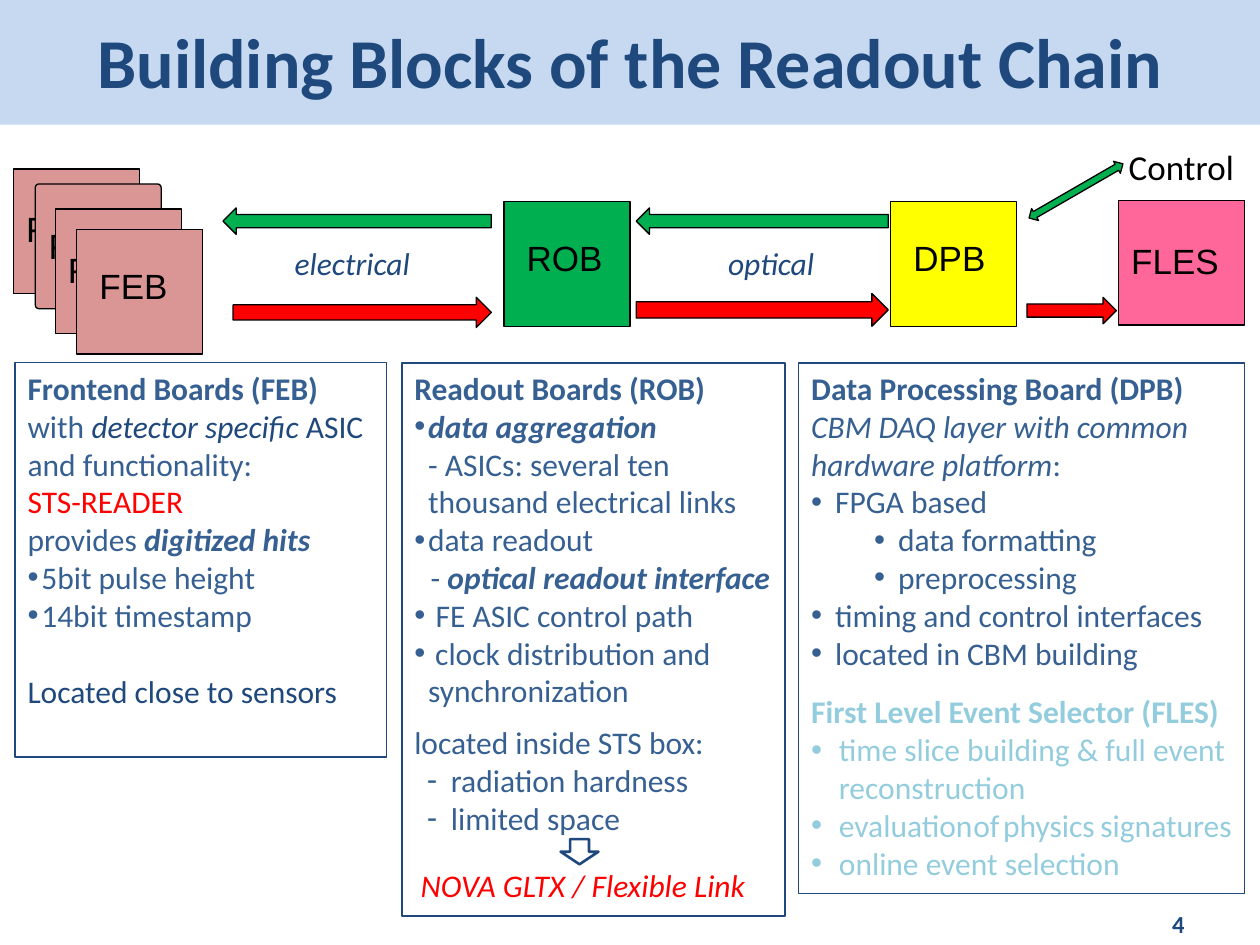
from typing import NamedTuple

from lxml.etree import SubElement
from pptx import Presentation
from pptx.dml.color import RGBColor
from pptx.enum.shapes import MSO_SHAPE
from pptx.enum.text import MSO_ANCHOR, PP_ALIGN
from pptx.oxml.ns import qn
from pptx.util import Emu, Pt

PX = 9144  # 100 px to the inch
COLORS = {
    "band": "C6D9F1", "navy": "1F497D", "blue": "376092", "pale": "93CDDD",
    "black": "000000", "red": "FF0000", "green": "00B050", "yellow": "FFFF00",
    "pink": "FF6699", "rose": "D99694",
}


class Box(NamedTuple):
    x: int
    y: int
    w: int
    h: int


class Run(NamedTuple):
    text: str
    color: str = "blue"
    bold: bool = False
    italic: bool = False
    size: int = 18


class Para(NamedTuple):
    runs: list[Run]
    left: int = 0
    hang: int = 0
    bullet: str = ""
    before: int = 0


class Board(NamedTuple):
    label: str
    box: Box
    fill: str
    left: int = 10
    top: int = 31
    corner: float = 0


class Arrow(NamedTuple):
    kind: MSO_SHAPE
    box: Box
    fill: str
    rotation: int = 0


class Panel(NamedTuple):
    box: Box
    paras: list[Para]


def px(n: int) -> Emu:
    return Emu(n * PX)


def rgb(name: str) -> RGBColor:
    return RGBColor.from_string(COLORS[name])


def add_run(p, text, *, size=18, font="Calibri", color="blue", bold=False, italic=False):
    r = p.add_run()
    r.text = text
    r.font.size, r.font.name = Pt(size), font
    r.font.bold, r.font.italic = bold, italic
    r.font.color.rgb = rgb(color)


def add_shape(slide, kind: MSO_SHAPE, box: Box, fill="", line="", width=0.75):
    sp = slide.shapes.add_shape(kind, *map(px, box))
    sp.shadow.inherit = False
    if fill:
        sp.fill.solid()
        sp.fill.fore_color.rgb = rgb(fill)
    else:
        sp.fill.background()
    if line:
        sp.line.color.rgb = rgb(line)
        sp.line.width = Pt(width)
    else:
        sp.line.fill.background()
    return sp


def add_label(slide, text: str, box: Box, align=PP_ALIGN.LEFT, wrap=False, **fmt) -> None:
    tf = slide.shapes.add_textbox(*map(px, box)).text_frame
    tf.word_wrap = wrap
    tf.vertical_anchor = MSO_ANCHOR.MIDDLE
    p = tf.paragraphs[0]
    p.alignment = align
    add_run(p, text, **fmt)


def add_board(slide, board: Board) -> None:
    kind = MSO_SHAPE.ROUNDED_RECTANGLE if board.corner else MSO_SHAPE.RECTANGLE
    sp = add_shape(slide, kind, board.box, board.fill, "black")
    if board.corner:
        sp.adjustments[0] = board.corner
    tf = sp.text_frame
    tf.vertical_anchor = MSO_ANCHOR.TOP
    tf.margin_left, tf.margin_top = px(board.left), px(board.top)
    p = tf.paragraphs[0]
    p.alignment = PP_ALIGN.LEFT
    add_run(p, board.label, size=20, font="Arial", color="black")


def add_arrow(slide, arrow: Arrow) -> None:
    add_shape(slide, arrow.kind, arrow.box, arrow.fill, "black").rotation = arrow.rotation


def add_panel(slide, panel: Panel) -> None:
    tf = add_shape(slide, MSO_SHAPE.RECTANGLE, panel.box, line="navy").text_frame
    tf.word_wrap = True
    tf.vertical_anchor = MSO_ANCHOR.TOP
    for i, para in enumerate(panel.paras):
        p = tf.add_paragraph() if i else tf.paragraphs[0]
        p.alignment = PP_ALIGN.LEFT
        p.space_before = Pt(para.before)
        pPr = p._p.get_or_add_pPr()
        pPr.set("marL", str(px(para.left)))
        pPr.set("indent", str(px(-para.hang)))
        if para.bullet:
            SubElement(pPr, qn("a:buFont")).set("typeface", "Arial")
            SubElement(pPr, qn("a:buChar")).set("char", para.bullet)
        for run in para.runs:
            add_run(p, **run._asdict())


def plain(text: str, left=0, before=0, **fmt) -> Para:
    return Para([Run(text, **fmt)], left, before=before)


def item(text: str, left=11, hang=0, bullet="•", **fmt) -> Para:
    return Para([Run(text, **fmt)], left, hang or left, bullet)


BOARDS = [
    Board("FEE", Box(11, 134, 100, 99), "rose"),
    Board("ROB", Box(400, 160, 100, 99), "green", 18, 28),
    Board("DPB", Box(707, 160, 100, 99), "yellow", 18, 28),
    Board("FLES", Box(888, 159, 100, 99), "pink"),
    Board("FEE", Box(28, 146, 100, 99), "rose", corner=0.03),
    Board("FEE", Box(44, 166, 100, 99), "rose"),
    Board("FEB", Box(61, 182, 100, 99), "rose", 18, 28),
]

ARROWS = [
    Arrow(MSO_SHAPE.RIGHT_ARROW, Box(185, 236, 205, 24), "red"),
    Arrow(MSO_SHAPE.RIGHT_ARROW, Box(505, 233, 200, 26), "red"),
    Arrow(MSO_SHAPE.RIGHT_ARROW, Box(815, 236, 71, 21), "red"),
    Arrow(MSO_SHAPE.LEFT_ARROW, Box(177, 165, 213, 21), "green"),
    Arrow(MSO_SHAPE.LEFT_ARROW, Box(505, 165, 200, 21), "green"),
    Arrow(MSO_SHAPE.LEFT_RIGHT_ARROW, Box(811, 146, 86, 11), "green", 330),
]

PANELS = [
    Panel(Box(634, 288, 354, 421), [
        plain("Data Processing Board (DPB)", bold=True),
        Para([Run("CBM DAQ layer with common hardware platform", italic=True), Run(":")]),
        item("FPGA based", 19),
        item("data formatting", 69, 19),
        item("preprocessing", 69, 19),
        item("timing and control interfaces", 19),
        item("located in CBM building", 19),
        plain("First Level Event Selector (FLES)", before=12, color="pale", bold=True),
        item("time slice building & full event reconstruction", 22, color="pale"),
        # Narrow spaces keep this item on one line
        Para([Run(text, "pale", size=size) for text, size in (
            ("evaluation", 18), (" ", 2), ("of", 18), (" ", 9),
            ("physics", 18), (" ", 14), ("signatures", 18))], 22, 22, "•"),
        item("online event selection", 22, color="pale"),
    ]),
    Panel(Box(319, 288, 304, 439), [
        plain("Readout Boards (ROB)", bold=True),
        item("data aggregation", bold=True, italic=True),
        plain("- ASICs: several ten", 11),
        plain("thousand electrical links", 11),
        item("data readout"),
        Para([Run("- "), Run("optical readout interface", bold=True, italic=True)], 13),
        item("FE ASIC control path", 17),
        item(" clock distribution and synchronization"),
        plain("located inside STS box:", before=8),
        item("radiation hardness", 29, 19, "-"),
        item("limited space", 29, 19, "-"),
        plain("NOVA GLTX / Flexible Link", 5, 17, color="red", italic=True),
    ]),
    Panel(Box(12, 288, 295, 313), [
        plain("Frontend Boards (FEB)", bold=True),
        Para([Run("with "), Run("detector specific ", "navy", italic=True),
              Run("ASIC ", "navy"), Run("and functionality:")]),
        plain("STS-READER", color="red"),
        Para([Run("provides "), Run("digitized hits", bold=True, italic=True)]),
        item("5bit pulse height"),
        item("14bit timestamp"),
        plain("Located close to sensors", before=22, color="navy"),
    ]),
]


def main() -> None:
    prs = Presentation()
    prs.slide_width, prs.slide_height = px(1000), px(750)
    slide = prs.slides.add_slide(prs.slide_layouts[6])

    # Title band and slide number
    add_shape(slide, MSO_SHAPE.RECTANGLE, Box(0, 0, 1000, 99), "band")
    add_label(slide, "Building Blocks of the Readout Chain", Box(50, -3, 900, 102),
              PP_ALIGN.CENTER, True, size=40, color="navy", bold=True)
    add_label(slide, "4", Box(717, 713, 233, 40), PP_ALIGN.RIGHT, True,
              size=14, color="navy", bold=True)

    # Readout chain
    for board in BOARDS:
        add_board(slide, board)
    for arrow in ARROWS:
        add_arrow(slide, arrow)
    add_label(slide, "electrical", Box(224, 189, 118, 40), color="navy", italic=True)
    add_label(slide, "optical", Box(568, 189, 89, 40), color="navy", italic=True)
    add_label(slide, "Control", Box(886, 110, 104, 44), size=20, color="black")

    # Descriptions
    for panel in PANELS:
        add_panel(slide, panel)
    add_shape(slide, MSO_SHAPE.DOWN_ARROW, Box(445, 666, 30, 20), line="navy", width=1.5)

    prs.save("out.pptx")


if __name__ == "__main__":
    main()
